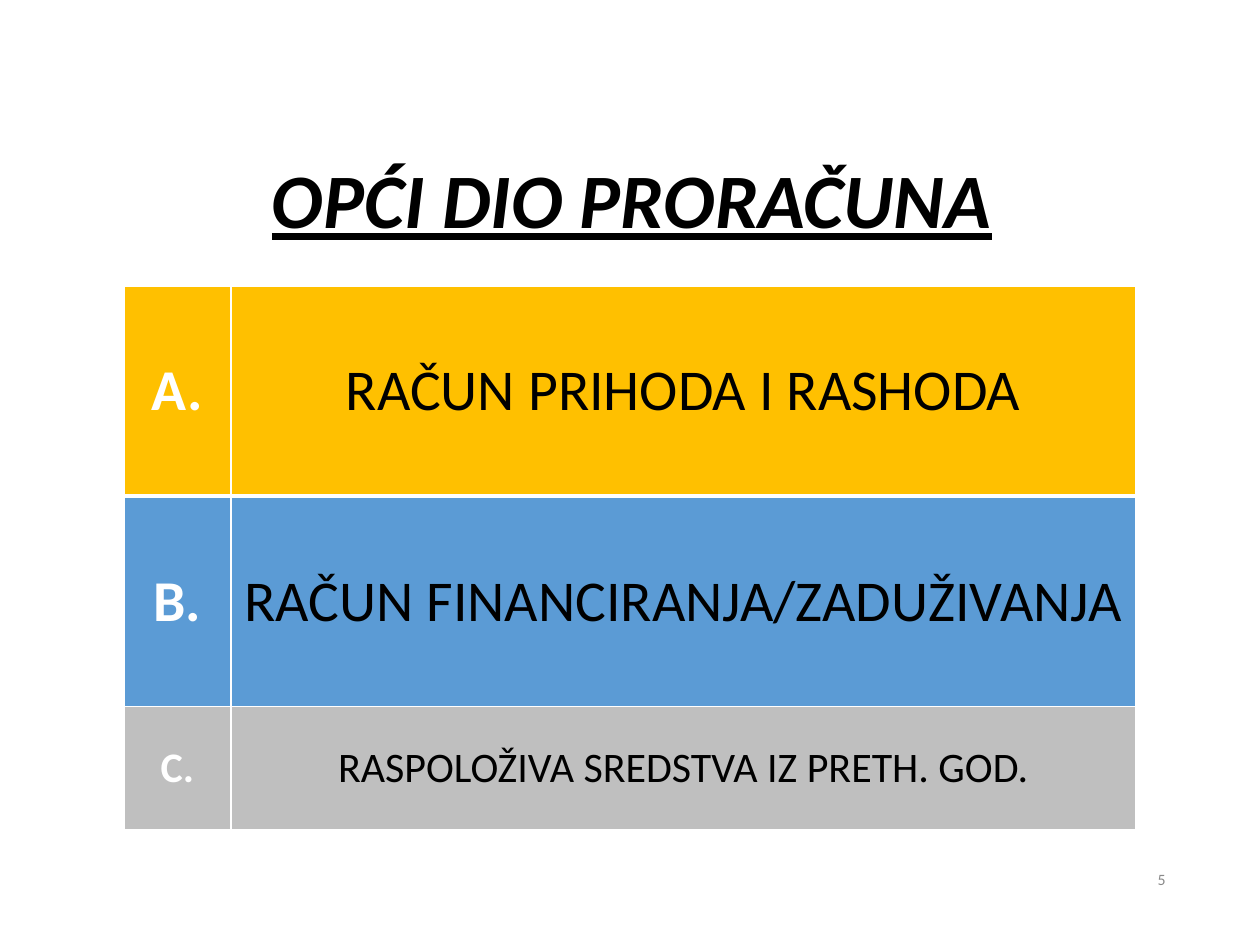
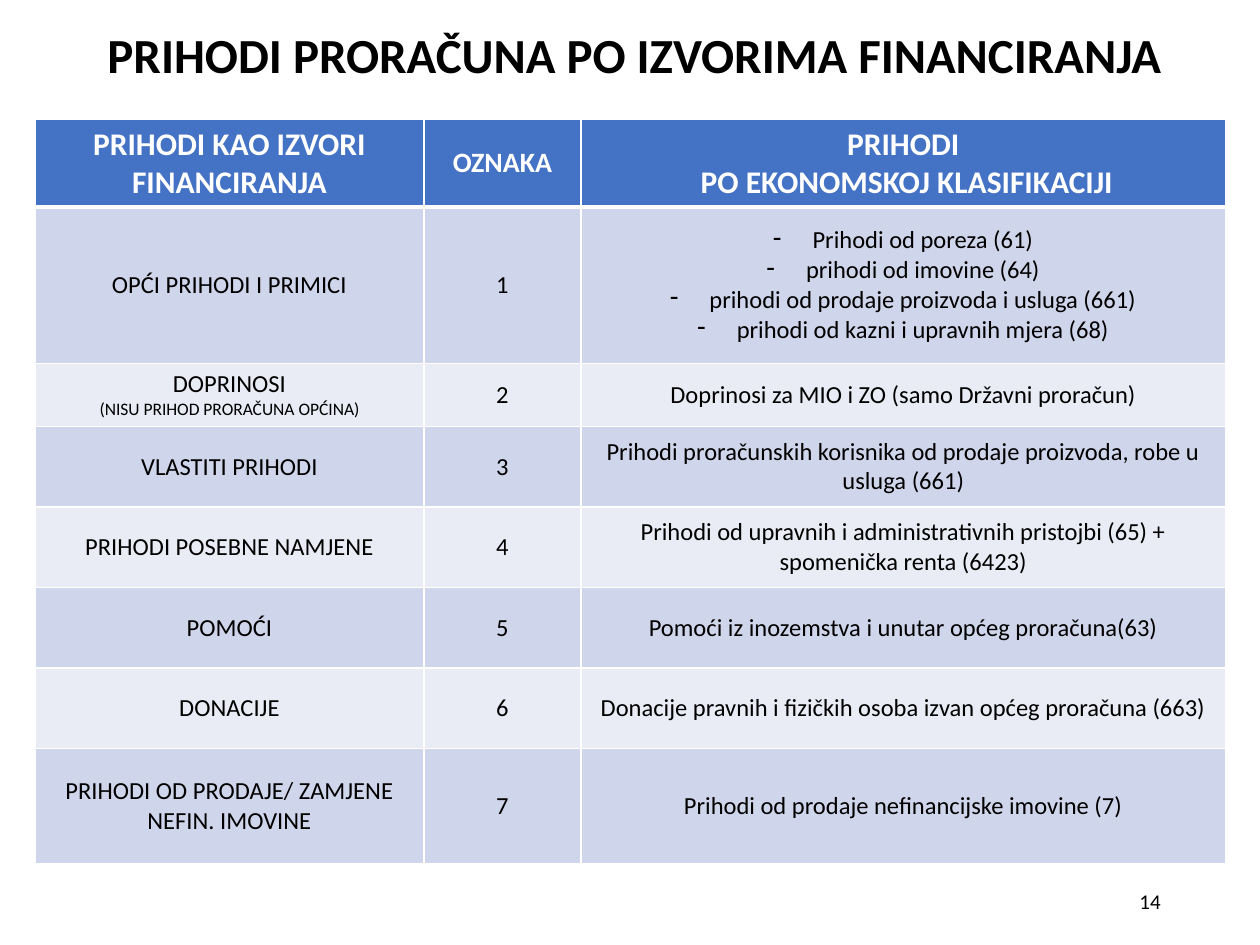
import pptx
import pptx.util
import pptx.dml.color
import pptx.enum.text
import pptx.oxml.ns
from lxml import etree

Pt = pptx.util.Pt
ALIGN = pptx.enum.text.PP_ALIGN
ANCHOR = pptx.enum.text.MSO_ANCHOR

FONT = "Calibri"
COLORS = {
    "white": "FFFFFF", "black": "000000", "grey": "898989",
    "gold": "FFC000", "blue": "5B9BD5", "silver": "BFBFBF",
    "header": "4472C4", "band_dark": "CFD5EA", "band_light": "E9EBF5",
}

BUDGET_TITLE = "OPĆI DIO PRORAČUNA"
BUDGET_PARTS = [
    ("A.", "RAČUN PRIHODA I RASHODA", "gold", 33, 120.2),
    ("B.", "RAČUN FINANCIRANJA/ZADUŽIVANJA", "blue", 33, 120.2),
    ("C.", "RASPOLOŽIVA SREDSTVA IZ PRETH. GOD.", "silver", 24, 70.6),
]
BUDGET_COLUMNS = [61, 517.2]

REVENUE_TITLE = "PRIHODI PRORAČUNA PO IZVORIMA FINANCIRANJA"
REVENUE_HEADER = [
    ("PRIHODI KAO IZVORI FINANCIRANJA", 18),
    ("OZNAKA", 16),
    ("PRIHODI\n PO EKONOMSKOJ KLASIFIKACIJI", 18),
]
CONTRIBUTION_NOTE = "(NISU PRIHOD PRORAČUNA OPĆINA)"
GENERAL_REVENUES = [
    "Prihodi od poreza (61)",
    "prihodi od imovine (64)",
    "prihodi od prodaje proizvoda i usluga (661)",
    "prihodi od kazni i upravnih mjera (68)",
]
REVENUE_SOURCES = [
    ("OPĆI PRIHODI I PRIMICI", "\n".join(GENERAL_REVENUES)),
    ("DOPRINOSI\n" + CONTRIBUTION_NOTE, "Doprinosi za MIO i ZO (samo Državni proračun)"),
    ("VLASTITI PRIHODI",
     "Prihodi proračunskih korisnika od prodaje proizvoda, robe u usluga (661)"),
    ("PRIHODI POSEBNE NAMJENE",
     "Prihodi od upravnih i administrativnih pristojbi (65) + spomenička renta (6423)"),
    ("POMOĆI", "Pomoći iz inozemstva i unutar općeg proračuna(63)"),
    ("DONACIJE", "Donacije pravnih i fizičkih osoba izvan općeg proračuna (663)"),
    ("PRIHODI OD PRODAJE/ ZAMJENE NEFIN. IMOVINE",
     "Prihodi od prodaje nefinancijske imovine (7)"),
]
REVENUE_COLUMNS = [222.2, 89.8, 368.4]
REVENUE_ROWS = [49, 89.3, 28, 46, 46, 46, 46, 66]


def rgb(name):
    return pptx.dml.color.RGBColor.from_string(COLORS[name])


def style(paragraph, size, color="black", bold=False, align=ALIGN.CENTER):
    paragraph.alignment = align
    for run in paragraph.runs:
        run.font.name = FONT
        run.font.size = Pt(size)
        run.font.bold = bold
        run.font.color.rgb = rgb(color)


def set_title(slide, text, box, size):
    title = slide.shapes.title
    title.left, title.top, title.width, title.height = map(Pt, box)
    frame = title.text_frame
    frame.text = text
    frame.word_wrap = True
    frame.vertical_anchor = ANCHOR.MIDDLE
    frame.paragraphs[0].line_spacing = 0.9
    style(frame.paragraphs[0], size, bold=True)
    return frame


def add_page_number(slide, number, box, size, color):
    frame = slide.shapes.add_textbox(*map(Pt, box)).text_frame
    frame.text = number
    frame.word_wrap = True
    frame.vertical_anchor = ANCHOR.MIDDLE
    style(frame.paragraphs[0], size, color, align=ALIGN.RIGHT)


def add_grid(slide, left, top, columns, rows):
    box = map(Pt, (left, top, sum(columns), sum(rows)))
    grid = slide.shapes.add_table(len(rows), len(columns), *box).table
    for column, width in zip(grid.columns, columns):
        column.width = Pt(width)
    for row, height in zip(grid.rows, rows):
        row.height = Pt(height)
    return grid


def add_borders(cell, row):
    widths = {"lnL": 1, "lnR": 1, "lnT": 3 if row == 1 else 1, "lnB": 3 if row == 0 else 1}
    properties = cell._tc.get_or_add_tcPr()
    for side, width in widths.items():
        line = etree.SubElement(properties, pptx.oxml.ns.qn("a:" + side), w=str(Pt(width)))
        fill = etree.SubElement(line, pptx.oxml.ns.qn("a:solidFill"))
        etree.SubElement(fill, pptx.oxml.ns.qn("a:srgbClr"), val=COLORS["white"])


def fill_cell(grid, row, column, text, fill, size, color="black", bold=False):
    cell = grid.cell(row, column)
    add_borders(cell, row)
    cell.fill.solid()
    cell.fill.fore_color.rgb = rgb(fill)
    cell.vertical_anchor = ANCHOR.MIDDLE
    cell.text_frame.text = text
    for paragraph in cell.text_frame.paragraphs:
        style(paragraph, 10 if paragraph.text == CONTRIBUTION_NOTE else size, color, bold)
    return cell


def add_dashes(cell):
    for paragraph in cell.text_frame.paragraphs:
        properties = paragraph._p.get_or_add_pPr()
        properties.set("marL", str(Pt(22.5)))
        properties.set("indent", str(Pt(-22.5)))
        etree.SubElement(properties, pptx.oxml.ns.qn("a:buChar"), char="-")


def build_budget_parts(slide):
    frame = set_title(slide, BUDGET_TITLE, (72, 59.8, 578.2, 103.7), 44)
    frame.vertical_anchor = ANCHOR.TOP
    frame.margin_top = Pt(33)
    run = frame.paragraphs[0].runs[0]
    run.font.italic = run.font.underline = True

    heights = [part[-1] for part in BUDGET_PARTS]
    grid = add_grid(slide, 70.9, 163.3, BUDGET_COLUMNS, heights)
    for row, (letter, account, fill, size, _) in enumerate(BUDGET_PARTS):
        cells = [
            fill_cell(grid, row, 0, letter, fill, size, "white", True),
            fill_cell(grid, row, 1, account, fill, size),
        ]
        for cell in cells:
            cell.margin_left = cell.margin_right = Pt(5.4)
            cell.margin_top = cell.margin_bottom = 0
    add_page_number(slide, "5", (639.4, 490.3, 33.8, 24.5), 9, "grey")


def build_revenue_sources(slide):
    set_title(slide, REVENUE_TITLE, (36, 10.8, 653, 43.9), 28)
    add_page_number(slide, "14", (508.3, 500.4, 162, 28.8), 12, "black")
    grid = add_grid(slide, 20, 67.9, REVENUE_COLUMNS, REVENUE_ROWS)
    for column, (heading, size) in enumerate(REVENUE_HEADER):
        fill_cell(grid, 0, column, heading, "header", size, "white", True)
    for row, (source, revenues) in enumerate(REVENUE_SOURCES, 1):
        band = "band_dark" if row % 2 else "band_light"
        for column, text in enumerate((source, str(row), revenues)):
            fill_cell(grid, row, column, text, band, 14)
    add_dashes(grid.cell(1, 2))


def main():
    deck = pptx.Presentation()
    deck.slide_width, deck.slide_height = Pt(720), Pt(540)
    title_only = deck.slide_layouts[5]
    for build in (build_budget_parts, build_revenue_sources):
        build(deck.slides.add_slide(title_only))
    deck.save("out.pptx")


if __name__ == "__main__":
    main()
